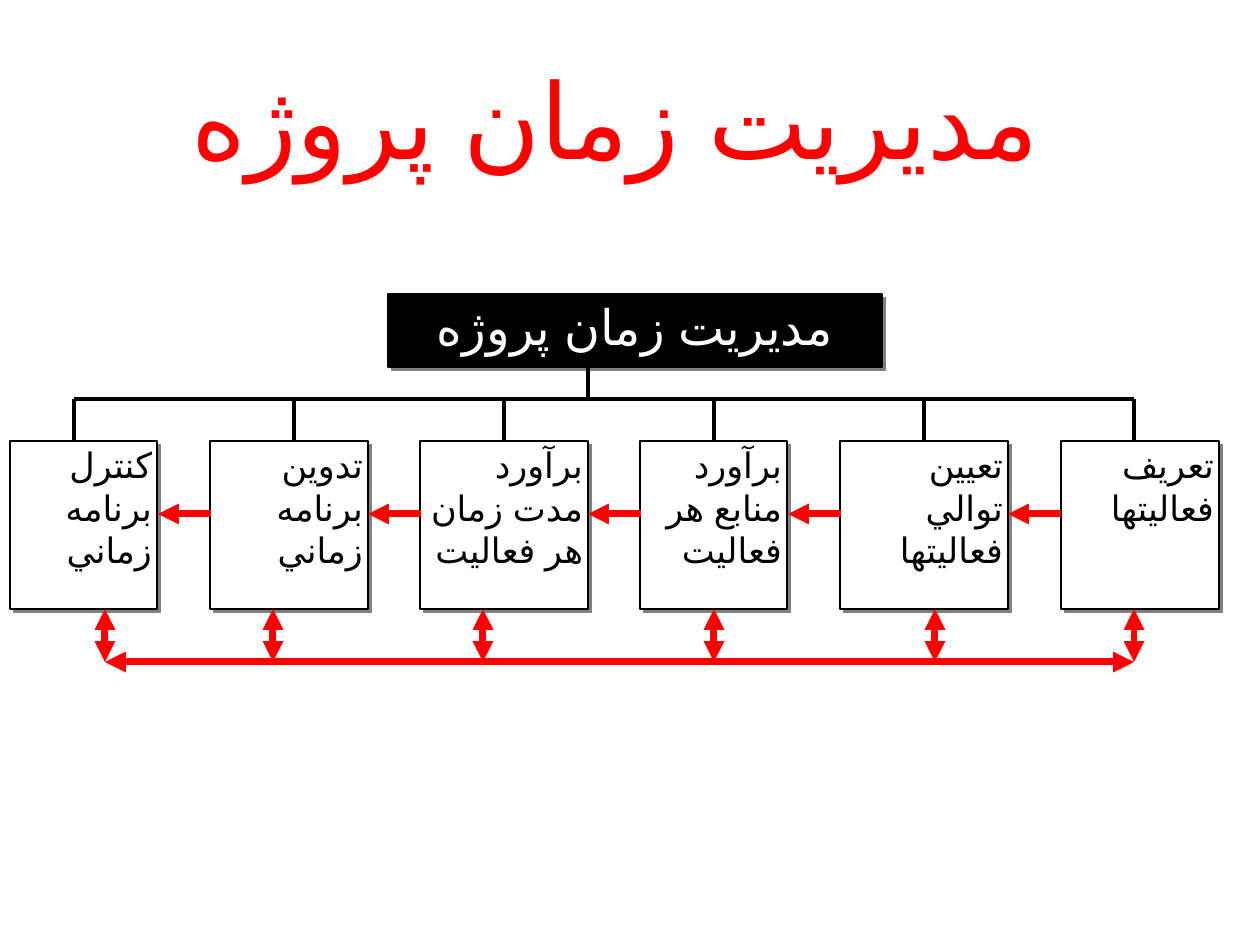
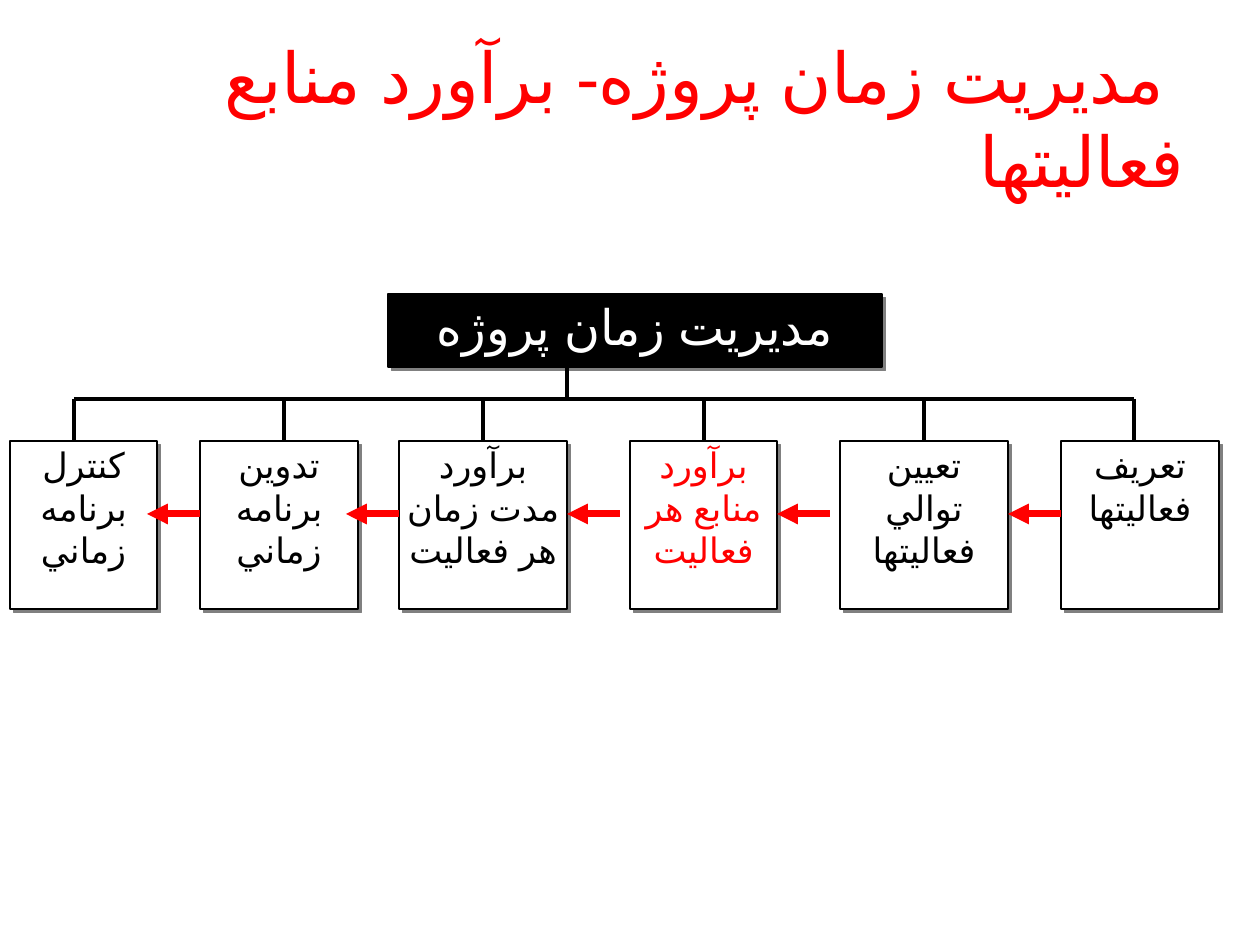
from dataclasses import dataclass

from lxml.etree import SubElement
from pptx import Presentation
from pptx.dml.color import RGBColor
from pptx.enum.shapes import MSO_CONNECTOR as Connector, MSO_SHAPE as Preset
from pptx.enum.text import MSO_ANCHOR as Anchor, PP_ALIGN as Align
from pptx.oxml.ns import qn
from pptx.util import Emu, Pt

PIXELS_PER_INCH = 126


@dataclass(frozen=True)
class Theme:
    font: str = "Arial"
    language: str = "fa-IR"
    black: str = "000000"
    white: str = "FFFFFF"
    red: str = "FF0000"
    shadow: str = "808080"
    heading_size: int = 28
    step_size: int = 20
    border: float = 1
    bus: float = 2
    stem: float = 2.25
    arrow: float = 4


THEME = Theme()

# Rows shared by both charts, in pixels
HEADING = (388, 294, 494, 73)
BUS_Y, STEP_Y, STEP_HEIGHT = 399, 441, 168
FLOW_Y, FLOW_LENGTH = 514, 53
FEEDBACK_Y = 662

# Steps from left to right: text and box width
STEPS = [
    ("کنترل برنامه زماني", 147),
    ("تدوين برنامه زماني", 158),
    ("برآورد مدت زمان هر فعاليت", 168),
    ("برآورد منابع هر فعاليت", 147),
    ("تعيين توالي فعاليتها", 168),
    ("تعريف فعاليتها", 158),
]


def px(value):
    return Emu(round(value * 914400 / PIXELS_PER_INCH))


def rgb(value):
    return RGBColor.from_string(value)


def write(shape, text, size, color, align, rtl=True):
    frame = shape.text_frame
    frame.word_wrap = True
    paragraph = frame.paragraphs[0]
    paragraph.text = text
    paragraph.alignment = align
    font = paragraph.font
    font.size = Pt(size)
    font.color.rgb = rgb(color)
    font.name = THEME.font
    # Persian text: language of the run, complex-script font of the paragraph
    paragraph.runs[0]._r.get_or_add_rPr().set("lang", THEME.language)
    properties = paragraph._p.get_or_add_pPr()
    defaults = properties.find(qn("a:defRPr"))
    defaults.set("lang", THEME.language)
    SubElement(defaults, qn("a:cs"), typeface=THEME.font)
    if rtl:
        properties.set("rtl", "1")
    return frame


def add_title(slide, text, size, align):
    shape = slide.shapes.add_textbox(*map(px, (63, 38, 1134, 158)))
    frame = write(shape, text, size, THEME.red, align)
    frame.vertical_anchor = Anchor.MIDDLE


def add_drop_shadow(shape):
    shape.shadow.inherit = False
    effects = shape._element.spPr.find(qn("a:effectLst"))
    shadow = SubElement(effects, qn("a:outerShdw"), dist=str(Pt(2.8)),
                        dir="2700000", algn="ctr", rotWithShape="0")
    SubElement(shadow, qn("a:srgbClr"), val=THEME.shadow)


def add_box(slide, bounds, fill, text, size, color, align, rtl=True):
    shape = slide.shapes.add_shape(Preset.RECTANGLE, *map(px, bounds))
    shape.fill.solid()
    shape.fill.fore_color.rgb = rgb(fill)
    shape.line.color.rgb = rgb(THEME.black)
    shape.line.width = Pt(THEME.border)
    add_drop_shadow(shape)
    frame = write(shape, text, size, color, align, rtl)
    frame.vertical_anchor = Anchor.TOP
    frame.margin_left = frame.margin_right = px(5)
    frame.margin_top = frame.margin_bottom = px(3)


def add_line(slide, start, end, color, width, ends=()):
    line = slide.shapes.add_connector(Connector.STRAIGHT, *map(px, start + end))
    line.line.color.rgb = rgb(color)
    line.line.width = Pt(width)
    for name in ends:
        SubElement(line.line._get_or_add_ln(), qn("a:" + name), type="triangle")
    SubElement(line._element.spPr, qn("a:effectLst"))


def add_chart(slide, trunk, lefts, stems, tips, align, highlight=None):
    # Heading and steps
    add_box(slide, HEADING, THEME.black, "مديريت زمان پروژه",
            THEME.heading_size, THEME.white, Align.CENTER, rtl=False)
    for index, (left, (text, width)) in enumerate(zip(lefts, STEPS)):
        color = THEME.red if index == highlight else THEME.black
        add_box(slide, (left, STEP_Y, width, STEP_HEIGHT), THEME.white,
                text, THEME.step_size, color, align)
    # Tree lines
    add_line(slide, (trunk, HEADING[1] + HEADING[3]), (trunk, BUS_Y),
             THEME.black, THEME.stem)
    add_line(slide, (stems[0], BUS_Y), (stems[-1], BUS_Y), THEME.black, THEME.bus)
    for x in stems:
        add_line(slide, (x, BUS_Y), (x, STEP_Y), THEME.black, THEME.stem)
    # Flow from right to left
    for x in tips:
        add_line(slide, (x + FLOW_LENGTH, FLOW_Y), (x, FLOW_Y),
                 THEME.red, THEME.arrow, ["tailEnd"])


def add_feedback(slide, positions):
    both = ["headEnd", "tailEnd"]
    add_line(slide, (positions[-1], FEEDBACK_Y), (positions[0], FEEDBACK_Y),
             THEME.red, THEME.arrow, both)
    for x in positions:
        add_line(slide, (x, FEEDBACK_Y), (x, STEP_Y + STEP_HEIGHT),
                 THEME.red, THEME.arrow, both)


def main():
    presentation = Presentation()
    presentation.slide_width, presentation.slide_height = px(1260), px(945)
    blank = presentation.slide_layouts[6]

    # Overview of time management
    slide = presentation.slides.add_slide(blank)
    add_title(slide, " مديريت زمان پروژه", 60, Align.CENTER)
    add_chart(slide, trunk=588,
              lefts=[10, 210, 420, 640, 840, 1061],
              stems=[74, 294, 504, 714, 924, 1134],
              tips=[158, 368, 588, 788, 1008], align=Align.RIGHT)
    add_feedback(slide, [105, 273, 483, 714, 935, 1134])

    # Resource estimating step
    slide = presentation.slides.add_slide(blank)
    add_title(slide, " مديريت زمان پروژه- برآورد منابع فعاليتها", 40, Align.RIGHT)
    add_chart(slide, trunk=567,
              lefts=[10, 200, 399, 630, 840, 1061],
              stems=[74, 284, 483, 704, 924, 1134],
              tips=[147, 346, 567, 777, 1008], align=Align.CENTER, highlight=3)

    presentation.save("out.pptx")


main()
